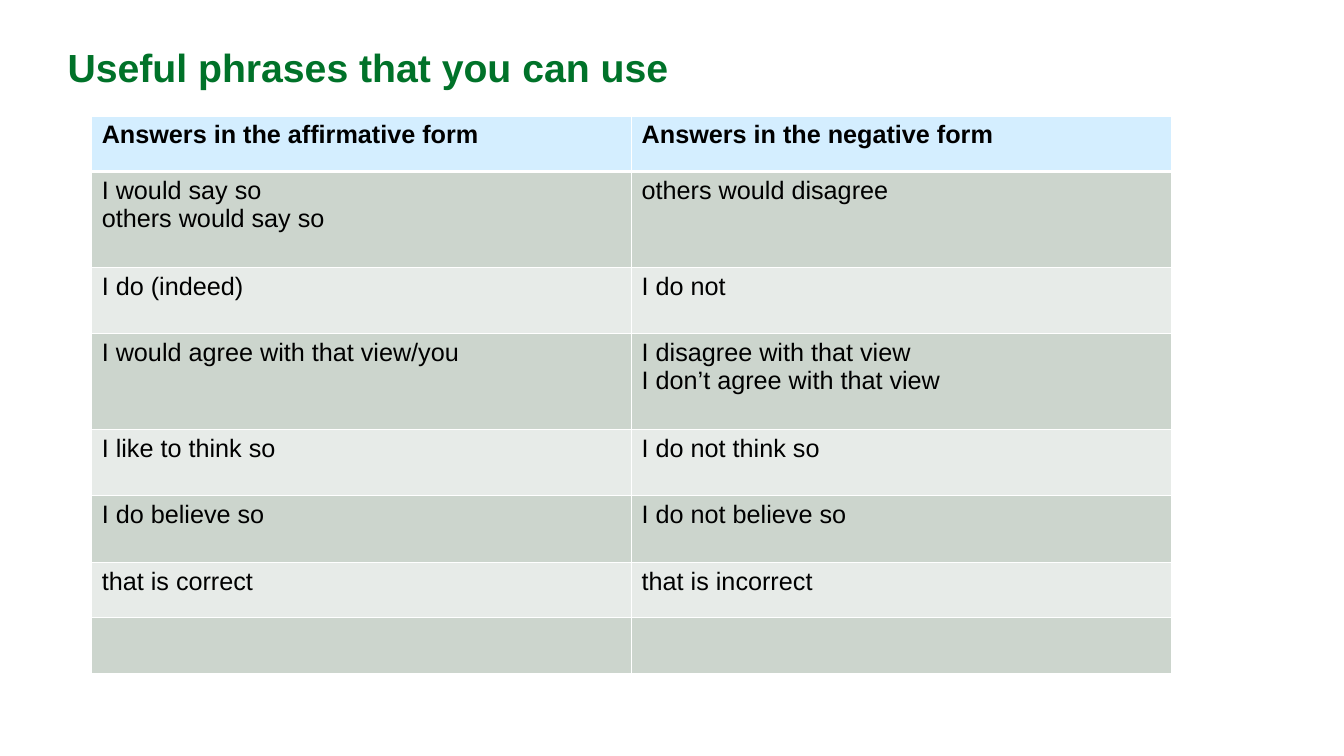
from typing import NamedTuple

from lxml import etree
from pptx import Presentation
from pptx.dml.color import RGBColor
from pptx.enum.text import MSO_ANCHOR, PP_ALIGN
from pptx.oxml.ns import qn
from pptx.util import Inches, Pt

MIDDLE = MSO_ANCHOR.MIDDLE
LEFT = PP_ALIGN.LEFT
FONT = "Arial"
HEX = {
    "title": "007229",
    "text": "000000",
    "head": "D4EEFF",
    "dark": "CCD5CD",
    "light": "E7EBE8",
    "rule": "FFFFFF",
}


class Row(NamedTuple):
    height: float
    yes: str
    no: str


ROWS = [
    Row(0.55, "Answers in the affirmative form", "Answers in the negative form"),
    Row(0.95, "I would say so\nothers would say so", "others would disagree"),
    Row(0.66, "I do (indeed)", "I do not"),
    Row(0.95, "I would agree with that view/you",
        "I disagree with that view\nI don’t agree with that view"),
    Row(0.66, "I like to think so", "I do not think so"),
    Row(0.66, "I do believe so", "I do not believe so"),
    Row(0.55, "that is correct", "that is incorrect"),
    Row(0.55, "", ""),
]


def style(para, size: float, color: str, bold: bool) -> None:
    para.alignment = LEFT
    font = para.font
    font.name, font.size, font.bold = FONT, Pt(size), bold
    font.color.rgb = RGBColor.from_string(HEX[color])


def add_rules(cell, top: float, bottom: float) -> None:
    """Draw the four cell borders; widths are in points."""
    props = cell._tc.get_or_add_tcPr()
    sides = {"lnL": 1, "lnR": 1, "lnT": top, "lnB": bottom}
    for spot, (side, width) in enumerate(sides.items()):
        line = etree.Element(qn(f"a:{side}"), w=str(Pt(width)))
        fill = etree.SubElement(line, qn("a:solidFill"))
        etree.SubElement(fill, qn("a:srgbClr"), val=HEX["rule"])
        props.insert(spot, line)


def add_title(slide) -> None:
    title = slide.shapes.title
    title.left, title.top = Inches(0.57), Inches(0.48)
    title.width, title.height = Inches(7.9), Inches(0.37)
    frame = title.text_frame
    frame.text = "Useful phrases that you can use"
    frame.vertical_anchor = MIDDLE
    style(frame.paragraphs[0], 28, "title", True)


def add_phrases(slide) -> None:
    total = sum(row.height for row in ROWS)
    table = slide.shapes.add_table(
        len(ROWS), 2, Inches(0.91), Inches(1.15), Inches(10.71), Inches(total)
    ).table
    for index, row in enumerate(ROWS):
        table.rows[index].height = Inches(row.height)
        shade = "head" if index == 0 else "dark" if index % 2 else "light"
        for col, text in enumerate((row.yes, row.no)):
            cell = table.cell(index, col)
            cell.text = text
            cell.fill.solid()
            cell.fill.fore_color.rgb = RGBColor.from_string(HEX[shade])
            add_rules(cell, 3 if index == 1 else 1, 3 if index == 0 else 1)
            for para in cell.text_frame.paragraphs:
                style(para, 18, "text", index == 0)


def main() -> None:
    deck = Presentation()
    deck.slide_width, deck.slide_height = Inches(13.33), Inches(7.5)
    slide = deck.slides.add_slide(deck.slide_layouts.get_by_name("Title Only"))
    add_title(slide)
    add_phrases(slide)
    deck.save("out.pptx")


if __name__ == "__main__":
    main()
